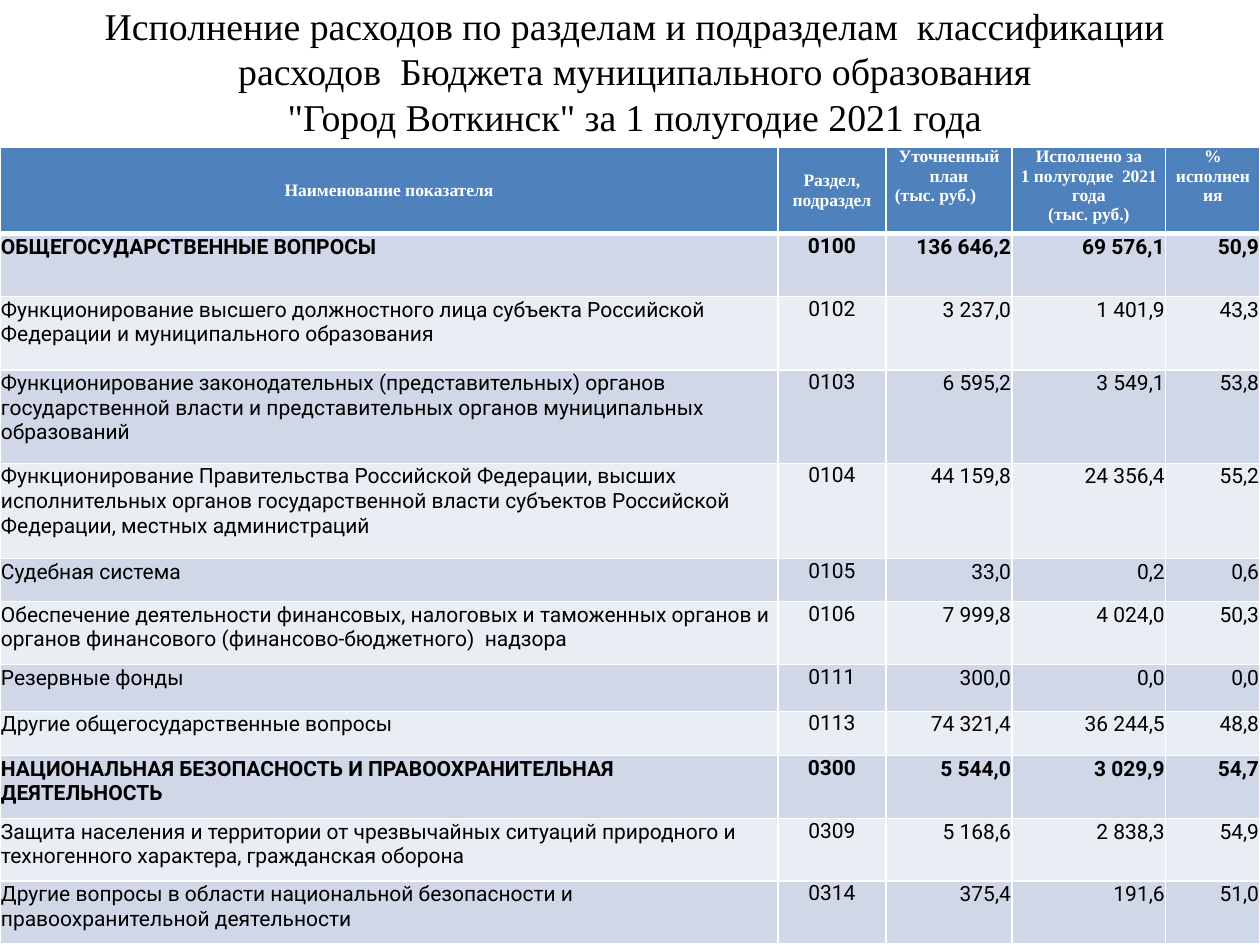
from pptx import Presentation
from pptx.dml.color import RGBColor
from pptx.enum.text import MSO_ANCHOR, PP_ALIGN
from pptx.oxml import parse_xml
from pptx.oxml.ns import nsdecls
from pptx.util import Cm, Pt

LEFT, CENTER, RIGHT = PP_ALIGN.LEFT, PP_ALIGN.CENTER, PP_ALIGN.RIGHT


def color(value):
    return RGBColor.from_string(value)


def format_cell(cell, text, fill, align, inset, font_name, size, text_color, bold, bottom=1):
    cell.margin_left = cell.margin_right = Cm(inset)
    cell.margin_top = cell.margin_bottom = Cm(0)
    cell.fill.solid()
    cell.fill.fore_color.rgb = color(fill)
    # Borders come before the fill in the cell properties
    for index, side in enumerate("LRTB"):
        width = Pt(bottom if side == "B" else 1)
        cell._tc.get_or_add_tcPr().insert(index, parse_xml(
            f'<a:ln{side} {nsdecls("a")} w="{width}"><a:solidFill>'
            f'<a:srgbClr val="FFFFFF"/></a:solidFill></a:ln{side}>'))
    cell.text_frame.text = text
    for paragraph in cell.text_frame.paragraphs:
        paragraph.alignment = align
        paragraph.font.name = font_name
        paragraph.font.size = Pt(size)
        paragraph.font.bold = bold
        paragraph.font.color.rgb = color(text_color)


presentation = Presentation()
presentation.slide_width, presentation.slide_height = Cm(25.4), Cm(19.05)
slide = presentation.slides.add_slide(presentation.slide_layouts[6])

# Title
title = slide.shapes.add_textbox(Cm(1.4), Cm(0), Cm(22.8), Cm(2.9))
frame = title.text_frame
frame.word_wrap = True
frame.margin_top = frame.margin_bottom = Cm(0.05)
frame.text = ("Исполнение расходов по разделам и подразделам  классификации "
              "расходов  Бюджета муниципального образования\n"
              '"Город Воткинск" за 1 полугодие 2021 года')
for paragraph in frame.paragraphs:
    paragraph.alignment = CENTER
    paragraph.line_spacing = Pt(26)
    paragraph.font.name = "Times New Roman"
    paragraph.font.size = Pt(21.6)
    paragraph.font.color.rgb = color("000000")

# Table contents: header text, alignment, anchor
headers = [
    ("Наименование показателя", CENTER, MSO_ANCHOR.MIDDLE),
    ("Раздел,\nподраздел", CENTER, MSO_ANCHOR.MIDDLE),
    ("Уточненный план\n(тыс. руб.)", CENTER, MSO_ANCHOR.TOP),
    ("Исполнено за\n1 полугодие  2021 года\n(тыс. руб.)", CENTER, MSO_ANCHOR.TOP),
    ("% исполнения", CENTER, MSO_ANCHOR.TOP),
]
expenses = [
    ("ОБЩЕГОСУДАРСТВЕННЫЕ ВОПРОСЫ", "0100", "136 646,2", "69 576,1", "50,9"),
    ("Функционирование высшего должностного лица субъекта Российской Федерации "
     "и муниципального образования", "0102", "3 237,0", "1 401,9", "43,3"),
    ("Функционирование законодательных (представительных) органов государственной власти "
     "и представительных органов муниципальных  образований",
     "0103", "6 595,2", "3 549,1", "53,8"),
    ("Функционирование Правительства Российской Федерации, высших  исполнительных органов "
     "государственной власти субъектов Российской Федерации, местных администраций",
     "0104", "44 159,8", "24 356,4", "55,2"),
    ("Судебная система", "0105", "33,0", "0,2", "0,6"),
    ("Обеспечение деятельности финансовых, налоговых и таможенных органов и органов "
     "финансового (финансово-бюджетного)  надзора", "0106", "7 999,8", "4 024,0", "50,3"),
    ("Резервные фонды", "0111", "300,0", "0,0", "0,0"),
    ("Другие общегосударственные вопросы", "0113", "74 321,4", "36 244,5", "48,8"),
    ("НАЦИОНАЛЬНАЯ БЕЗОПАСНОСТЬ И ПРАВООХРАНИТЕЛЬНАЯ ДЕЯТЕЛЬНОСТЬ",
     "0300", "5 544,0", "3 029,9", "54,7"),
    ("Защита населения и территории от чрезвычайных ситуаций природного и техногенного "
     "характера, гражданская оборона", "0309", "5 168,6", "2 838,3", "54,9"),
    ("Другие вопросы в области национальной безопасности и правоохранительной деятельности",
     "0314", "375,4", "191,6", "51,0"),
]
column_widths = [15.68, 2.18, 2.54, 3.1, 1.9]
row_heights = [1.74, 1.27, 1.48, 1.88, 1.92, 0.87, 1.27, 0.94, 0.89, 1.27, 1.26, 1.27]

# Table grid
table = slide.shapes.add_table(len(row_heights), len(column_widths), Cm(0), Cm(2.97),
                               Cm(sum(column_widths)), Cm(sum(row_heights))).table
for column, width in zip(table.columns, column_widths):
    column.width = Cm(width)
for row, height in zip(table.rows, row_heights):
    row.height = Cm(height)

# Header row
for column, (text, align, anchor) in enumerate(headers):
    cell = table.cell(0, column)
    format_cell(cell, text, "4F81BD", align, 0.18, "Times New Roman", 10, "FFFFFF", True, 3)
    cell.vertical_anchor = anchor
table.cell(0, 2).text_frame.paragraphs[1].alignment = LEFT

# Expense rows: section totals have codes ending in 00
alignments = [LEFT, CENTER, RIGHT, RIGHT, RIGHT]
for row, expense in enumerate(expenses, start=1):
    fill = "D0D8E8" if row % 2 else "E9EDF4"
    bold = expense[1].endswith("00")
    for column, (text, align) in enumerate(zip(expense, alignments)):
        cell = table.cell(row, column)
        inset = 0.18 if align == CENTER else 0.02
        format_cell(cell, text, fill, align, inset, "Roboto", 12, "000000", bold)
        if align != CENTER:
            cell.margin_top = Cm(0.02)

presentation.save("out.pptx")
